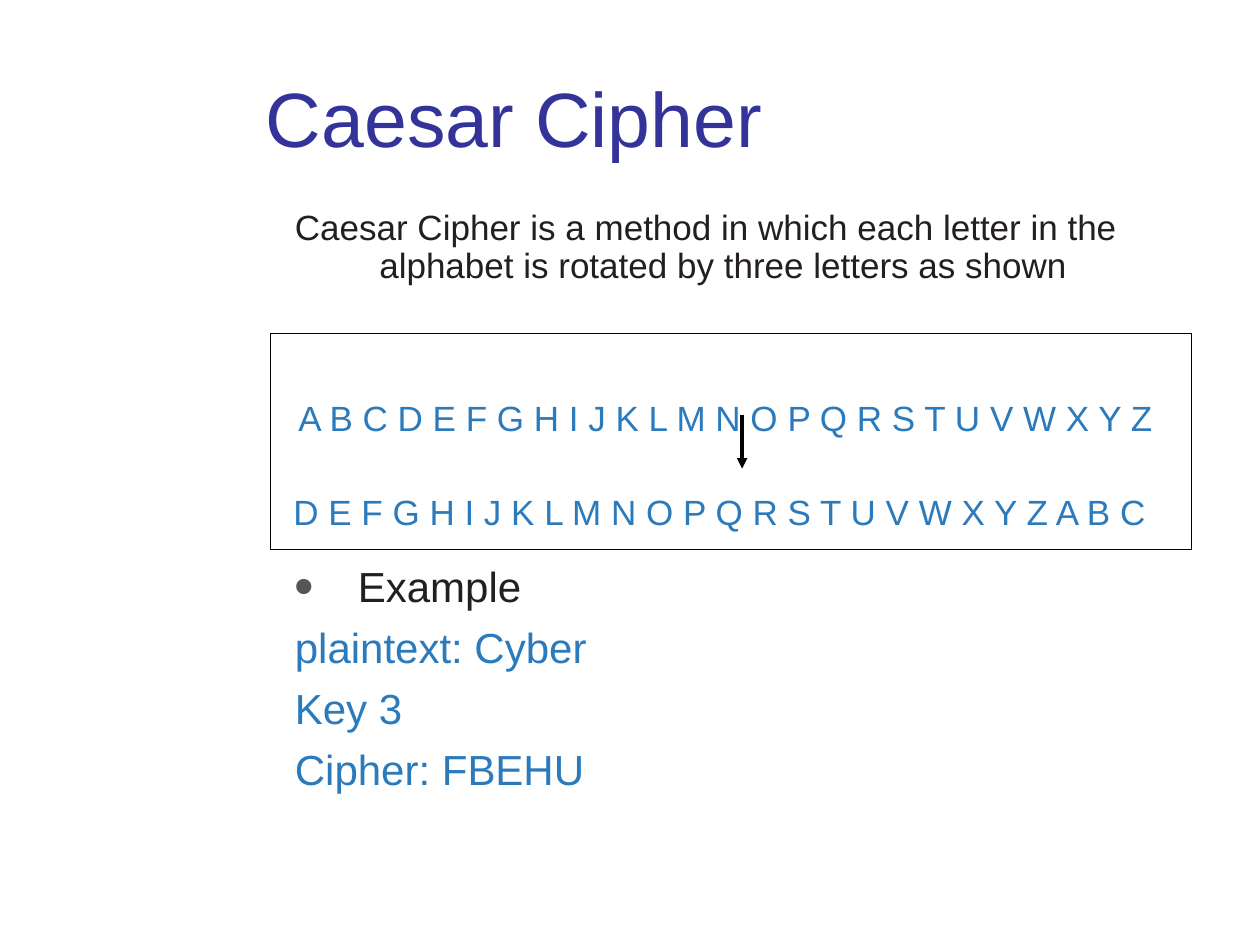
from lxml import etree
from pptx import Presentation
from pptx.dml.color import RGBColor
from pptx.enum.shapes import MSO_CONNECTOR, MSO_SHAPE
from pptx.enum.text import MSO_ANCHOR, MSO_AUTO_SIZE, PP_ALIGN
from pptx.oxml.ns import qn
from pptx.util import Inches, Pt

LINE, RECT = MSO_CONNECTOR.STRAIGHT, MSO_SHAPE.RECTANGLE
MIDDLE, TOP, LEFT = MSO_ANCHOR.MIDDLE, MSO_ANCHOR.TOP, PP_ALIGN.LEFT
FIXED = MSO_AUTO_SIZE.NONE
NAVY = RGBColor(0x33, 0x33, 0x99)
BLUE = RGBColor(0x2B, 0x7A, 0xBC)
DARK = RGBColor(0x23, 0x1F, 0x20)
BLACK = RGBColor(0, 0, 0)
GRAY = "575557"

TITLE = "Caesar Cipher"
INTRO = ("Caesar Cipher is a method in which each letter in the "
         "alphabet is rotated by three letters as shown")
BODY = [
    (INTRO, dict(size=20, color=DARK, indent=0.67, lines=0.9)),
    ("Example", dict(size=24, color=DARK, indent=0.5, before=157, dot=True)),
    ("plaintext: Cyber", dict(size=24, color=BLUE, before=6)),
    ("Key 3", dict(size=24, color=BLUE, before=6)),
    ("Cipher: FBEHU", dict(size=24, color=BLUE, before=6)),
]
ABC = "ABCDEFGHIJKLMNOPQRSTUVWXYZ"
SHIFT = 3
ROWS = [(2.27, 3.1, ABC), (2.23, 3.84, ABC[SHIFT:] + ABC[:SHIFT])]


def place(shape, left, top, width, height):
    spots = dict(left=left, top=top, width=width, height=height)
    for name, value in spots.items():
        setattr(shape, name, Inches(value))


def set_frame(frame, anchor):
    form = dict(word_wrap=True, auto_size=FIXED, vertical_anchor=anchor)
    for name, value in form.items():
        setattr(frame, name, value)


def set_mark(para, indent, dot):
    props = para._p.get_or_add_pPr()
    props.set("marL", str(Inches(indent)))
    props.set("indent", str(-Inches(indent)))
    if not dot:
        etree.SubElement(props, qn("a:buNone"))
        return
    color = etree.SubElement(props, qn("a:buClr"))
    etree.SubElement(color, qn("a:srgbClr"), val=GRAY)
    etree.SubElement(props, qn("a:buSzPct"), val="133000")
    etree.SubElement(props, qn("a:buFont"), typeface="Arial")
    etree.SubElement(props, qn("a:buChar"), char="•")


def write(para, text, size, color, indent=0, lines=1.0, before=0, dot=False):
    set_mark(para, indent, dot)
    form = dict(alignment=LEFT, line_spacing=lines,
                space_before=Pt(before), space_after=Pt(0))
    for name, value in form.items():
        setattr(para, name, value)
    run = para.add_run()
    run.text = text
    for name, value in dict(name="Arial", size=Pt(size), bold=False).items():
        setattr(run.font, name, value)
    run.font.color.rgb = color


deck = Presentation()
deck.slide_width, deck.slide_height = Inches(10), Inches(7.5)
slide = deck.slides.add_slide(deck.slide_layouts[1])
shapes = slide.shapes

title = shapes.title
place(title, 2.01, 0.3, 7.49, 1.25)
set_frame(title.text_frame, MIDDLE)
write(title.text_frame.paragraphs[0], TITLE, 44, NAVY)

body = slide.placeholders[1]
place(body, 2.24, 1.62, 7.33, 5.08)
frame = body.text_frame
set_frame(frame, TOP)
for i, (text, form) in enumerate(BODY):
    para = frame.add_paragraph() if i else frame.paragraphs[0]
    write(para, text, **form)

for left, top, row in ROWS:
    box = shapes.add_textbox(0, 0, 0, 0)
    place(box, left, top, 7.23, 0.56)
    set_frame(box.text_frame, TOP)
    write(box.text_frame.paragraphs[0], " ".join(row), 20, BLUE)

arrow = shapes.add_connector(LINE, Inches(5.89), Inches(3.29),
                             Inches(5.89), Inches(3.72))
arrow.line.color.rgb = BLACK
arrow.line.width = Pt(2)
etree.SubElement(arrow.line._get_or_add_ln(), qn("a:tailEnd"), type="triangle")
etree.SubElement(arrow._element.spPr, qn("a:effectLst"))

border = shapes.add_shape(RECT, 0, 0, 0, 0)
place(border, 2.15, 2.65, 7.31, 1.71)
border.shadow.inherit = False
border.fill.background()
border.line.color.rgb = BLACK
border.line.width = Pt(0.5)

deck.save("out.pptx")
